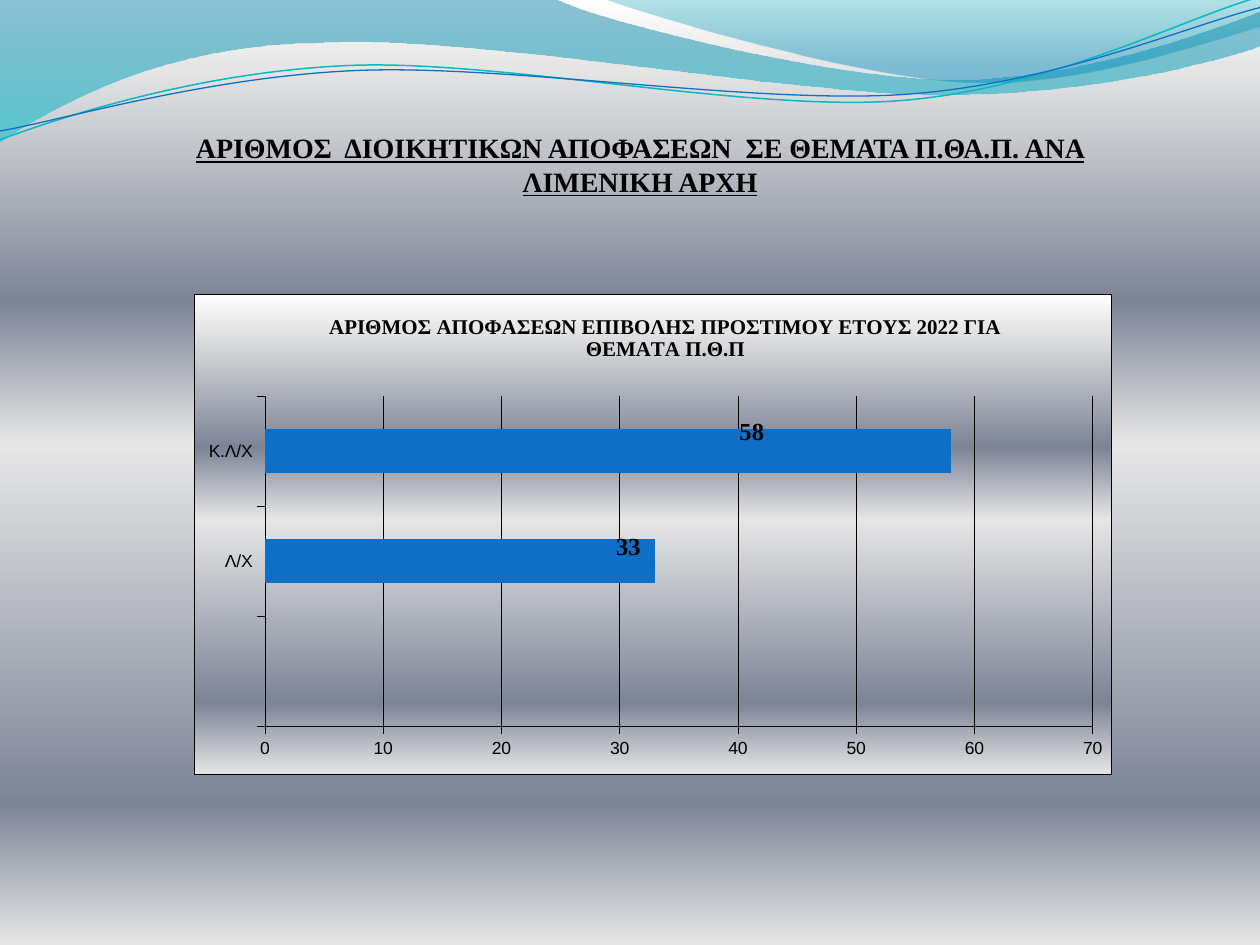
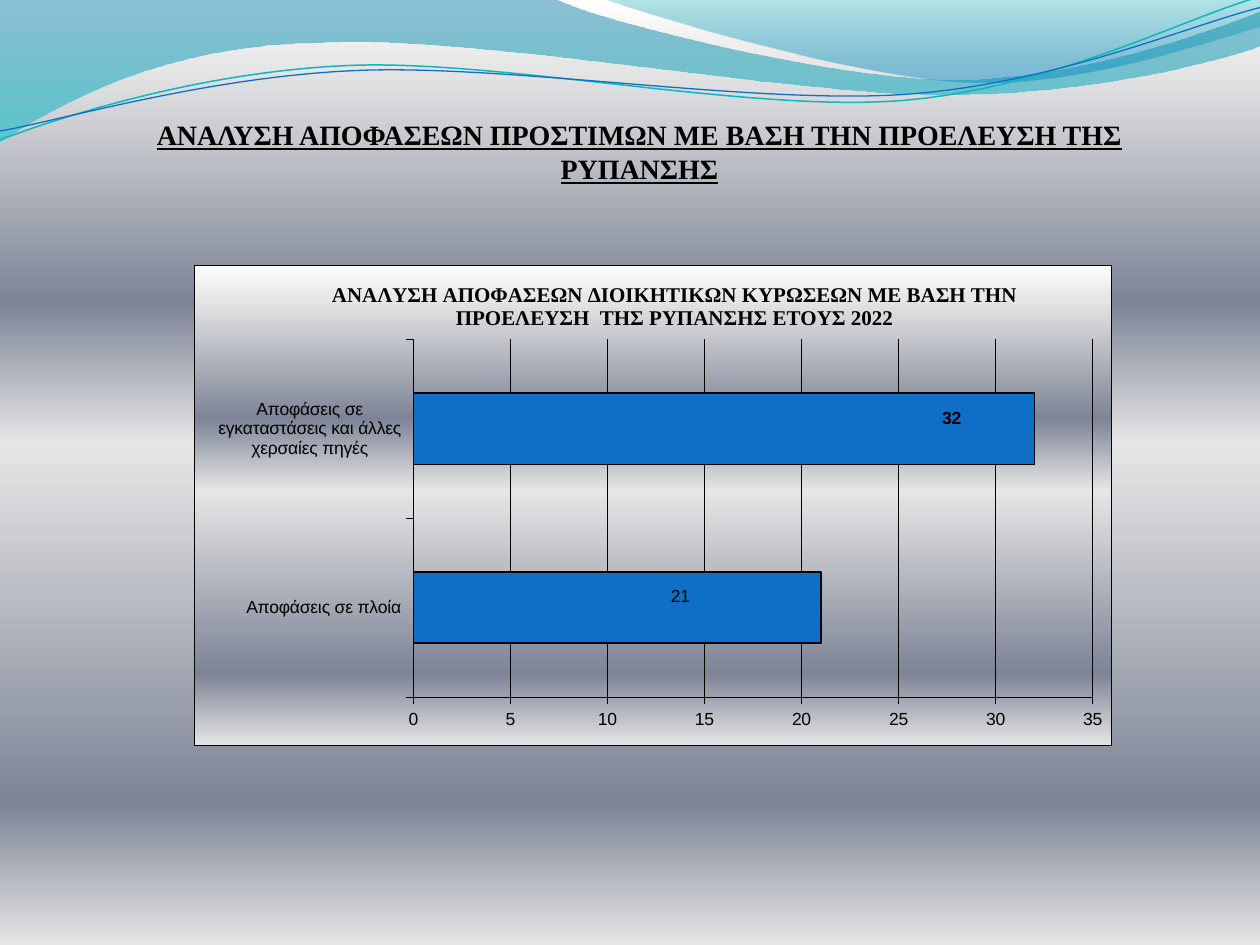
from math import cos, radians, sin

from lxml import etree
from pptx import Presentation
from pptx.chart.data import CategoryChartData
from pptx.dml.color import RGBColor
from pptx.enum.chart import XL_CHART_TYPE, XL_LABEL_POSITION, XL_TICK_LABEL_POSITION, XL_TICK_MARK
from pptx.enum.text import MSO_ANCHOR, PP_ALIGN
from pptx.oxml.ns import qn
from pptx.util import Inches, Pt

BAR = XL_CHART_TYPE.BAR_CLUSTERED
LABEL_AT_END = XL_LABEL_POSITION.OUTSIDE_END
LABELS_LOW = XL_TICK_LABEL_POSITION.LOW
TICK_OUTSIDE = XL_TICK_MARK.OUTSIDE
BOTTOM = MSO_ANCHOR.BOTTOM
CENTER = PP_ALIGN.CENTER


class Theme:
    black = RGBColor.from_string("000000")
    blue = RGBColor.from_string("0F6FC6")
    teal = RGBColor.from_string("0AB8BF")
    thin = Pt(0.25)
    # Gradient stops: position, colour, opacity (all in percent)
    steel = [(0, "FFFFFF", 100), (7, "E6E6E6", 100), (32, "7D8496", 100),
             (47, "E6E6E6", 100), (85, "7D8496", 100), (100, "E6E6E6", 100)]
    sea = [(0, "0074A1", 45), (100, "00C6CF", 55)]
    lagoon = [(0, "00A1A9", 30), (80, "008BBF", 45)]
    heading = {"name": "Times New Roman", "size": Pt(16), "bold": True, "underline": True}
    chart_title = {"name": "Times New Roman", "size": Pt(12), "bold": True}
    chart_text = {"name": "Arial", "size": Pt(10), "bold": False}
    strong_label = {"name": "Times New Roman", "size": Pt(14), "bold": True}
    bold_label = {"name": "Arial", "size": Pt(10), "bold": True}


def paint_gradient(parent, stops):
    """Replace the solid fill of a properties element by a vertical gradient."""
    gradient = etree.Element(qn("a:gradFill"), rotWithShape="1")
    stop_list = etree.SubElement(gradient, qn("a:gsLst"))
    for position, colour, opacity in stops:
        stop = etree.SubElement(stop_list, qn("a:gs"), pos=str(position * 1000))
        tint = etree.SubElement(stop, qn("a:srgbClr"), val=colour)
        if opacity < 100:
            etree.SubElement(tint, qn("a:alpha"), val=str(opacity * 1000))
    etree.SubElement(gradient, qn("a:lin"), ang="5400000", scaled="0")
    parent.replace(parent.find(qn("a:solidFill")), gradient)


def place(parent, index, modes, percents):
    """Give a chart part a manual layout, as its child number index."""
    old = parent.find(qn("c:layout"))
    if old is not None:
        parent.remove(old)
    layout = etree.Element(qn("c:layout"))
    manual = etree.SubElement(layout, qn("c:manualLayout"))
    for name, mode in modes.items():
        etree.SubElement(manual, qn("c:" + name), val=mode)
    for name, percent in zip("xywh", percents):
        etree.SubElement(manual, qn("c:" + name), val=f"{percent / 100:.4f}")
    parent.insert(index, layout)


# Each wave: start, segments (2 numbers: line, 6: cubic curve), gradient
WAVES = [
    ((0, -0.01), [(4.4, -0.01), (4.76, 0.17, 6.64, 0.63, 7.58, 0.63),
                  (8.53, 0.63, 9.58, 0.26, 10, 0.09), (10.01, 0.36),
                  (9.83, 0.44, 8.7, 0.76, 7.46, 0.75), (6.22, 0.75, 3.82, 0.28, 2.57, 0.34),
                  (1.29, 0.35, 0.46, 0.83, -0.01, 1.13), (0, -0.01)], Theme.sea),
    ((4.79, -0.01), [(5.09, 0.11, 6.82, 0.62, 7.69, 0.65), (8.56, 0.69, 9.61, 0.32, 10, 0.21),
                     (10, 0), (4.79, -0.01)], Theme.lagoon),
    ((0, 1.11), [(0.48, 0.93, 1.58, 0.57, 2.77, 0.52), (3.95, 0.47, 5.93, 0.89, 7.13, 0.8),
                 (8.33, 0.71, 9.38, 0.15, 9.98, -0.02)], None),
    ((0, 1.04), [(0.47, 0.96, 1.64, 0.61, 2.83, 0.56), (4.03, 0.51, 5.97, 0.83, 7.17, 0.75),
                 (8.36, 0.67, 9.41, 0.21, 10, 0.06)], None),
]
# Colour, width and turning centre of the two open waves; the filled ones have none
STROKES = [None, None, (Theme.teal, Pt(0.85), (4.99, 0.57)), (Theme.blue, Pt(0.75), (5, 0.59))]
TILT = 2.7

# Places inside a chart are percents of its size; labels are keyed by bar number
SLIDES = [
    {"heading": "ΑΡΙΘΜΟΣ  ΔΙΟΙΚΗΤΙΚΩΝ ΑΠΟΦΑΣΕΩΝ  ΣΕ ΘΕΜΑΤΑ Π.ΘΑ.Π. ΑΝΑ ΛΙΜΕΝΙΚΗ ΑΡΧΗ",
     "heading_at": (1.22, 0.47, 7.72, 1.1), "chart_top": 2.33,
     "title": "ΑΡΙΘΜΟΣ ΑΠΟΦΑΣΕΩΝ ΕΠΙΒΟΛΗΣ ΠΡΟΣΤΙΜΟΥ ΕΤΟΥΣ 2022 ΓΙΑ ΘΕΜΑΤΑ Π.Θ.Π",
     "title_at": (14.3, 3.3), "plot_at": (7.7, 21.3, 90.3, 68.7),
     "categories": ["", "Λ/Χ", "Κ.Λ/Χ"], "values": [None, 33, 58],
     "axis": (70, 10), "bar_line": None,
     "labels": {1: (-4.8, -3, Theme.strong_label), 2: (-23.6, -4, Theme.strong_label)}},
    {"heading": "ΑΝΑΛΥΣΗ ΑΠΟΦΑΣΕΩΝ ΠΡΟΣΤΙΜΩΝ ΜΕ ΒΑΣΗ ΤΗΝ ΠΡΟΕΛΕΥΣΗ ΤΗΣ ΡΥΠΑΝΣΗΣ",
     "heading_at": (1.14, 0.77, 7.87, 0.7), "chart_top": 2.1,
     "title": "ΑΝΑΛΥΣΗ ΑΠΟΦΑΣΕΩΝ ΔΙΟΙΚΗΤΙΚΩΝ ΚΥΡΩΣΕΩΝ ΜΕ ΒΑΣΗ ΤΗΝ ΠΡΟΕΛΕΥΣΗ  ΤΗΣ ΡΥΠΑΝΣΗΣ ΕΤΟΥΣ 2022",
     "title_at": (14.6, 2.8), "plot_at": (23.9, 15.5, 74.1, 74.4),
     "categories": ["Αποφάσεις σε πλοία", "Αποφάσεις σε εγκαταστάσεις και άλλες χερσαίες πηγές"],
     "values": [21, 32], "axis": (35, 5), "bar_line": Pt(1),
     "labels": {0: (-16.9, -2.2, Theme.chart_text), 1: (-10.6, -2.2, Theme.bold_label)}},
]

deck = Presentation()
deck.slide_width, deck.slide_height = Inches(10), Inches(7.5)

for content in SLIDES:
    page = deck.slides.add_slide(deck.slide_layouts[6])
    page.background.fill.solid()
    paint_gradient(page.element.find(".//" + qn("p:bgPr")), Theme.steel)

    for (start, segments, stops), stroke in zip(WAVES, STROKES):
        angle = radians(TILT) if stroke else 0
        centre_x, centre_y = stroke[2] if stroke else (0, 0)
        steps = []
        for step in [start, *segments]:
            offsets = [(x - centre_x, y - centre_y) for x, y in zip(step[::2], step[1::2])]
            steps.append([(Inches(centre_x + x * cos(angle) - y * sin(angle)),
                           Inches(centre_y + x * sin(angle) + y * cos(angle)))
                          for x, y in offsets])
        builder = page.shapes.build_freeform(*steps[0][0])
        builder.add_line_segments([step[-1] for step in steps[1:]], close=stops is not None)
        wave = builder.convert_to_shape()
        straight_parts = list(wave.element.iter(qn("a:lnTo")))
        for straight, points in zip(straight_parts, steps[1:]):
            if len(points) == 3:
                curve = etree.Element(qn("a:cubicBezTo"))
                for x, y in points:
                    etree.SubElement(curve, qn("a:pt"), x=str(x - wave.left), y=str(y - wave.top))
                straight.getparent().replace(straight, curve)
        wave.shadow.inherit = False
        if stops:
            wave.fill.solid()
            paint_gradient(wave.element.spPr, stops)
            wave.line.fill.background()
        else:
            wave.fill.background()
            wave.line.color.rgb, wave.line.width = stroke[:2]
            wave.rotation = 360 - TILT

    box = page.shapes.add_textbox(*map(Inches, content["heading_at"]))
    frame = box.text_frame
    frame_format = {"word_wrap": True, "vertical_anchor": BOTTOM, "margin_left": 0,
                    "margin_top": Inches(0.05), "margin_right": 0, "margin_bottom": 0}
    for name, value in frame_format.items():
        setattr(frame, name, value)
    para = frame.paragraphs[0]
    para.alignment = CENTER
    span = para.add_run()
    span.text = content["heading"]

    data = CategoryChartData()
    data.categories = content["categories"]
    data.add_series("Series 1", content["values"])
    chart = page.shapes.add_chart(BAR, Inches(1.54), Inches(content["chart_top"]),
                                  Inches(7.28), Inches(3.82), data).chart
    chart.has_legend = False
    title_frame = chart.chart_title.text_frame
    title_frame.text = content["title"]
    title_span = title_frame.paragraphs[0].runs[0]
    fonts = [(span.font, Theme.heading), (chart.font, Theme.chart_text),
             (title_span.font, Theme.chart_title)]

    plot = chart.plots[0]
    plot.gap_width = 150
    plot.vary_by_categories = False
    values_axis, names_axis = chart.value_axis, chart.category_axis
    values_axis.minimum_scale = 0
    values_axis.maximum_scale, values_axis.major_unit = content["axis"]
    values_axis.tick_labels.number_format = "#,##0"
    values_axis.tick_labels.number_format_is_linked = False
    names_axis.tick_label_position = LABELS_LOW
    for axis in (values_axis, names_axis):
        axis.major_tick_mark = TICK_OUTSIDE
        fonts.append((axis.tick_labels.font, Theme.chart_text))
    for line in (values_axis.format.line, names_axis.format.line,
                 values_axis.major_gridlines.format.line):
        line.color.rgb = Theme.black
        line.width = Theme.thin

    bars = plot.series[0]
    bars.format.fill.solid()
    bars.format.fill.fore_color.rgb = Theme.blue
    if content["bar_line"]:
        bars.format.line.color.rgb = Theme.black
        bars.format.line.width = content["bar_line"]
    bars.data_labels.show_value = True
    for number, (_, _, label_format) in content["labels"].items():
        label = bars.points[number].data_label
        label.position = LABEL_AT_END
        fonts.append((label.font, label_format))
    fonts.append((bars.data_labels.font, label_format))

    for font, values in fonts:
        font.color.rgb = Theme.black
        for name, value in values.items():
            setattr(font, name, value)

    root = chart.element
    for leader in root.iter(qn("c:showLeaderLines")):
        leader.set("val", "0")
    edges = {"xMode": "edge", "yMode": "edge"}
    place(root.find(".//" + qn("c:plotArea")), 0, {"layoutTarget": "inner", **edges},
          content["plot_at"])
    place(root.find(".//" + qn("c:title")), 1, edges, content["title_at"])
    for label, (x, y, _) in zip(root.iter(qn("c:dLbl")), content["labels"].values()):
        place(label, 1, {}, (x, y))

    area = etree.Element(qn("c:spPr"))
    etree.SubElement(area, qn("a:solidFill"))
    border = etree.SubElement(area, qn("a:ln"), w=str(Theme.thin))
    border_fill = etree.SubElement(border, qn("a:solidFill"))
    etree.SubElement(border_fill, qn("a:srgbClr"), val=str(Theme.black))
    paint_gradient(area, Theme.steel)
    root.find(qn("c:chart")).addnext(area)

deck.save("out.pptx")
